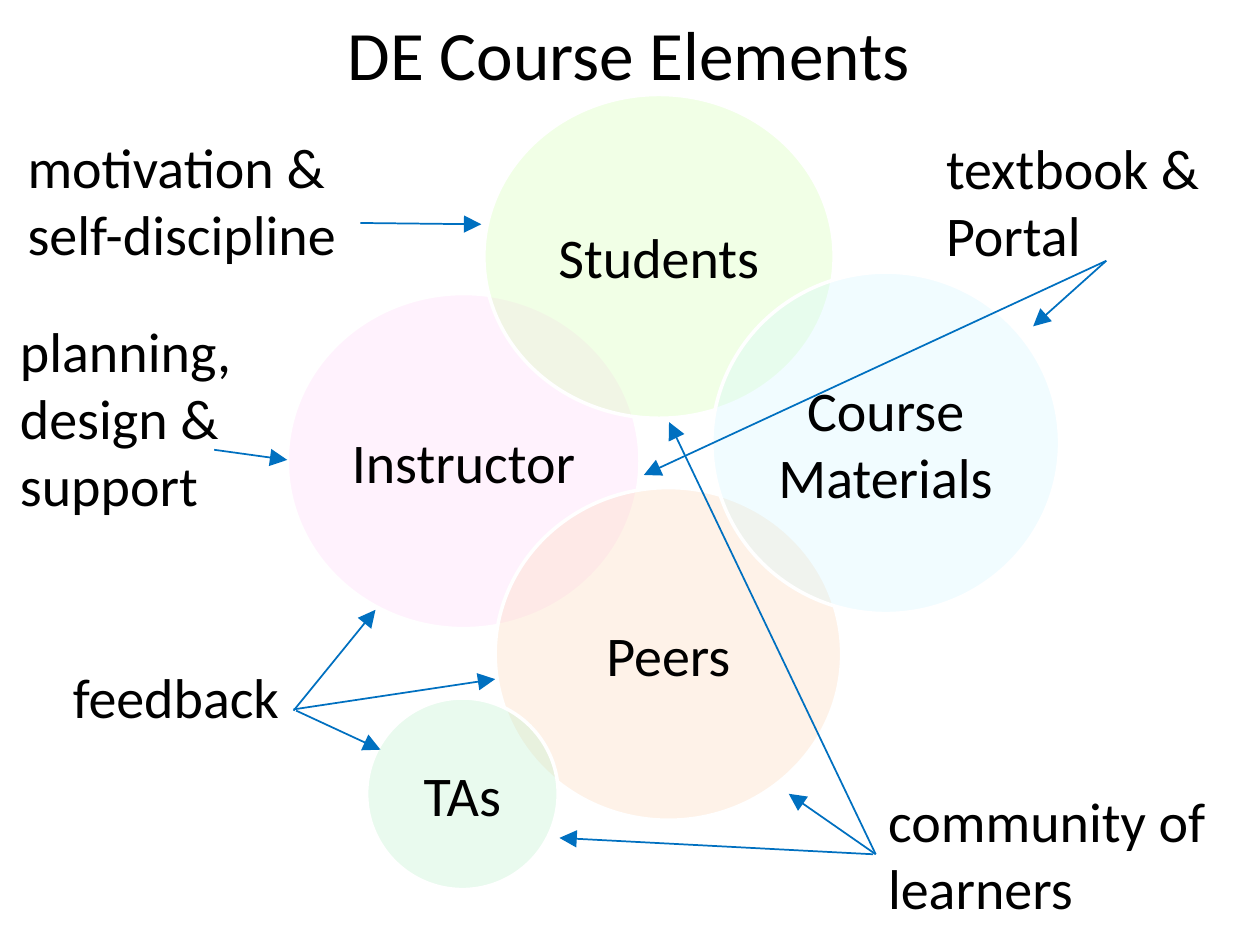
import pptx
import pptx.util
import pptx.dml.color
import pptx.enum.shapes
import pptx.enum.text
import pptx.oxml.ns
from lxml import etree
from pptx.util import Inches

COLORS = {
    "text": "000000", "arrow": "0070C0", "outline": "FFFFFF",
    "Instructor": "FFD5F9", "Students": "D1FFAF", "Peers": "FCD5B5",
    "Course Materials": "D1F6FF", "TAs": "B7EFCA",
}
qn = pptx.oxml.ns.qn
rgb = pptx.dml.color.RGBColor.from_string
MSO_SHAPE = pptx.enum.shapes.MSO_SHAPE
MSO_CONNECTOR = pptx.enum.shapes.MSO_CONNECTOR
PP_ALIGN = pptx.enum.text.PP_ALIGN
MSO_ANCHOR = pptx.enum.text.MSO_ANCHOR


def set_text(sp, text, size=32, centered=False):
    tf = sp.text_frame
    tf.word_wrap = True
    tf.text = text
    tf.vertical_anchor = MSO_ANCHOR.MIDDLE if centered else MSO_ANCHOR.TOP
    p = tf.paragraphs[0]
    p.alignment = PP_ALIGN.CENTER if centered else PP_ALIGN.LEFT
    r = p.runs[0]
    r.font.name = "Calibri"
    r.font.size = pptx.util.Pt(size)
    r.font.color.rgb = rgb(COLORS["text"])


prs = pptx.Presentation()
prs.slide_width, prs.slide_height = Inches(10), Inches(7.5)
s = prs.slides.add_slide(prs.slide_layouts[6])

# Title
title = s.shapes.add_textbox(Inches(0.49), Inches(0.14), Inches(9), Inches(0.56))
set_text(title, "DE Course Elements", 39.6, centered=True)

# Labels around the circles
labels = [
    ("planning, design & support", 0.06, 2.46, 2.22, 1.72),
    ("textbook & Portal", 7.41, 1.01, 2.38, 1.18),
    ("community of learners", 6.95, 6.19, 2.87, 1.18),
    ("motivation & self-discipline", 0.12, 1, 3.15, 1.18),
    ("feedback", 0.48, 5.21, 2.77, 0.64),
]
for text, *box in labels:
    set_text(s.shapes.add_textbox(*map(Inches, box)), text)

# Overlapping translucent circles, back to front
circles = [
    ("Instructor", 2.28, 2.33, 2.8, 2.66),
    ("Students", 3.84, 0.75, 2.78, 2.57),
    ("Peers", 3.93, 3.87, 2.75, 2.64),
    ("Course Materials", 5.65, 2.16, 2.76, 2.71),
    ("TAs", 2.91, 5.54, 1.52, 1.52),
]
for name, *box in circles:
    sp = s.shapes.add_shape(MSO_SHAPE.OVAL, *map(Inches, box))
    sp.shadow.inherit = False
    sp.fill.solid()
    sp.fill.fore_color.rgb = rgb(COLORS[name])
    color = sp.fill._xPr.find(qn("a:solidFill"))[0]
    etree.SubElement(color, qn("a:alpha"), val="30000")
    sp.line.color.rgb = rgb(COLORS["outline"])
    sp.line.width = pptx.util.Pt(2)
    set_text(sp, name, centered=True)
    sp.text_frame.margin_left = sp.text_frame.margin_right = Inches(0.05)

# Arrows from each label to the circles it concerns
arrows = [
    (2.86, 1.77, 3.82, 1.78),  # motivation
    (1.7, 3.57, 2.28, 3.65),  # planning
    (2.33, 5.64, 2.98, 4.84),  # feedback
    (2.33, 5.63, 3.93, 5.39),
    (2.35, 5.64, 3.02, 5.95),
    (8.78, 2.07, 8.2, 2.59),  # textbook
    (8.78, 2.07, 5.11, 3.77),
    (6.95, 6.78, 6.26, 6.3),  # community
    (6.93, 6.78, 4.44, 6.65),
    (6.95, 6.78, 5.31, 3.35),
]
for ends in arrows:
    line = s.shapes.add_connector(MSO_CONNECTOR.STRAIGHT, *map(Inches, ends))
    line.line.color.rgb = rgb(COLORS["arrow"])
    line.line.width = pptx.util.Pt(1)
    ln = line.line._get_or_add_ln()
    etree.SubElement(ln, qn("a:tailEnd"), type="triangle", w="lg", len="lg")
    etree.SubElement(ln.getparent(), qn("a:effectLst"))

prs.save("out.pptx")
